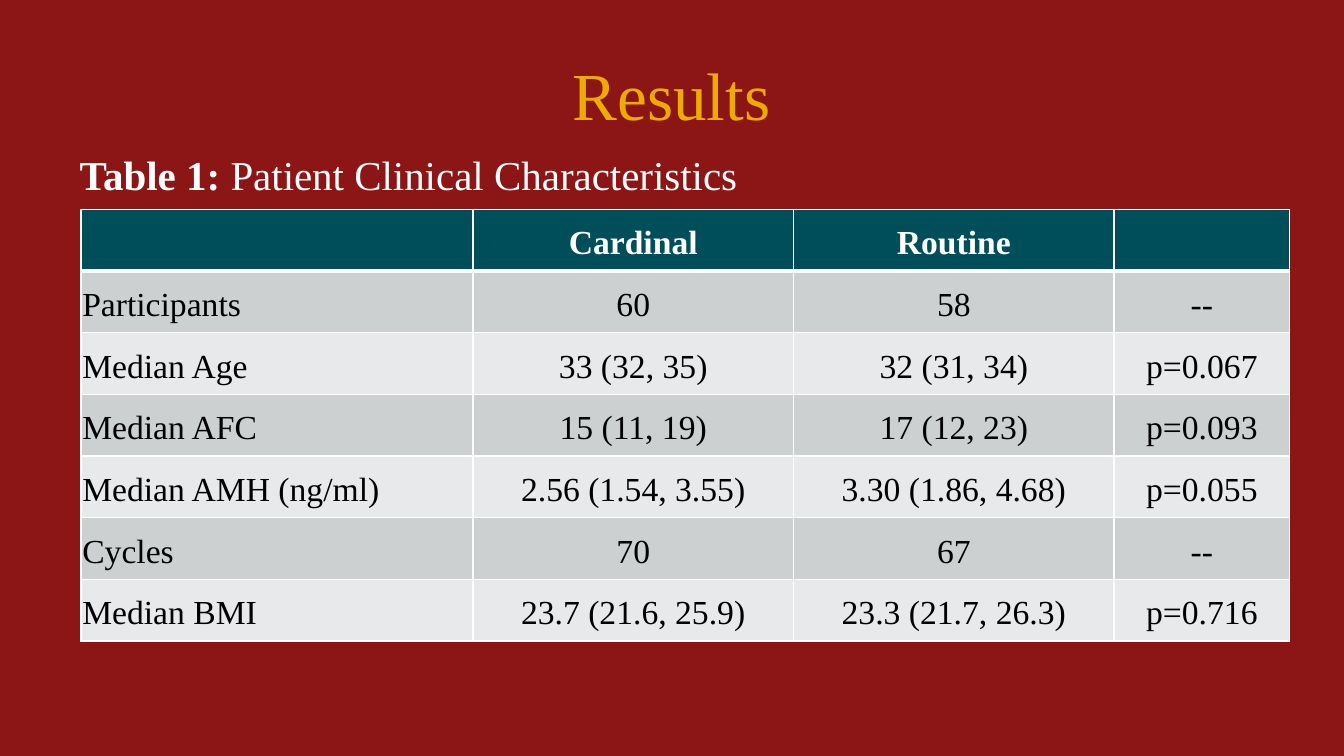
import pptx
import pptx.dml.color
import pptx.enum.text
import pptx.oxml
import pptx.oxml.ns
import pptx.util
from dataclasses import dataclass

Inches = pptx.util.Inches
Pt = pptx.util.Pt
Align = pptx.enum.text.PP_ALIGN
Anchor = pptx.enum.text.MSO_ANCHOR


@dataclass
class Theme:
    face: str = "Times New Roman"
    back: str = "8C1515"
    gold: str = "EDAA00"
    light: str = "FFFFFF"
    dark: str = "000000"
    head: str = "004E59"
    bands: tuple = ("CCD0D1", "E7E9EA")
    title: float = 40
    label: float = 24.4
    cell: float = 20
    thin: float = 1
    thick: float = 3


def color(code):
    return pptx.dml.color.RGBColor.from_string(code)


class Page:
    def __init__(self, deck, theme):
        self.theme = theme
        self.slide = deck.slides.add_slide(deck.slide_layouts[5])
        fill = self.slide.background.fill
        fill.solid()
        fill.fore_color.rgb = color(theme.back)

    def style(self, para, size, code, bold=None):
        font = para.font
        font.name = self.theme.face
        font.size = Pt(size)
        font.color.rgb = color(code)
        font.bold = bold

    def title(self, text, box):
        shape = self.slide.shapes.title
        shape.left, shape.top, shape.width, shape.height = map(Inches, box)
        frame = shape.text_frame
        frame.text = text
        frame.vertical_anchor = Anchor.MIDDLE
        para = frame.paragraphs[0]
        para.alignment = Align.CENTER
        para.space_after = Pt(6)
        self.style(para, self.theme.title, self.theme.gold)

    def label(self, lead, text, box):
        frame = self.slide.shapes.add_textbox(*map(Inches, box)).text_frame
        frame.word_wrap = True
        para = frame.paragraphs[0]
        para.line_spacing = 0.9
        self.style(para, self.theme.label, self.theme.light)
        for part, bold in ((lead, True), (text, False)):
            run = para.add_run()
            run.text = part
            run.font.bold = bold

    def edges(self, cell, widths):
        props = cell._tc.get_or_add_tcPr()
        for spot, (side, width) in enumerate(zip("LRTB", widths)):
            props.insert(spot, pptx.oxml.parse_xml(
                f'<a:ln{side} {pptx.oxml.ns.nsdecls("a")} w="{Pt(width)}">'
                f'<a:solidFill><a:srgbClr val="{self.theme.light}"/></a:solidFill>'
                f'</a:ln{side}>'))

    def cell(self, cell, text, row, col):
        theme = self.theme
        head = row == 0
        cell.fill.solid()
        cell.fill.fore_color.rgb = color(theme.head if head else theme.bands[(row - 1) % 2])
        top = theme.thick if row == 1 else theme.thin
        base = theme.thick if head else theme.thin
        self.edges(cell, (theme.thin, theme.thin, top, base))
        cell.vertical_anchor = Anchor.MIDDLE
        cell.margin_left = cell.margin_right = cell.margin_top = Inches(0.01)
        cell.margin_bottom = 0
        cell.text = text
        para = cell.text_frame.paragraphs[0]
        para.alignment = Align.CENTER if head or col else Align.LEFT
        para.line_spacing = 1.15
        self.style(para, theme.cell, theme.light if head else theme.dark, head)

    def table(self, rows, widths, left, top, height):
        table = self.slide.shapes.add_table(
            len(rows), len(widths), Inches(left), Inches(top),
            Inches(sum(widths)), Inches(height * len(rows))).table
        table.horz_banding = False
        for col, width in zip(table.columns, widths):
            col.width = Inches(width)
        for r, row in enumerate(rows):
            table.rows[r].height = Inches(height)
            for c, text in enumerate(row):
                self.cell(table.cell(r, c), text, r, c)


def main():
    deck = pptx.Presentation()
    deck.slide_width = Inches(11.11)
    deck.slide_height = Inches(6.25)
    page = Page(deck, Theme())
    page.title("Results", (0.44, 0.4, 10.22, 0.75))
    page.label("Table 1: ", "Patient Clinical Characteristics", (0.56, 1.23, 10.22, 0.5))
    rows = [
        ("", "Cardinal", "Routine", ""),
        ("Participants", "60", "58", "--"),
        ("Median Age", "33 (32, 35)", "32 (31, 34)", "p=0.067"),
        ("Median AFC", "15 (11, 19)", "17 (12, 23)", "p=0.093"),
        ("Median AMH (ng/ml)", "2.56 (1.54, 3.55)", "3.30 (1.86, 4.68)", "p=0.055"),
        ("Cycles", "70", "67", "--"),
        ("Median BMI", "23.7 (21.6, 25.9)", "23.3 (21.7, 26.3)", "p=0.716"),
    ]
    page.table(rows, (3.24, 2.65, 2.65, 1.45), 0.67, 1.73, 0.51)
    deck.save("out.pptx")


if __name__ == "__main__":
    main()
